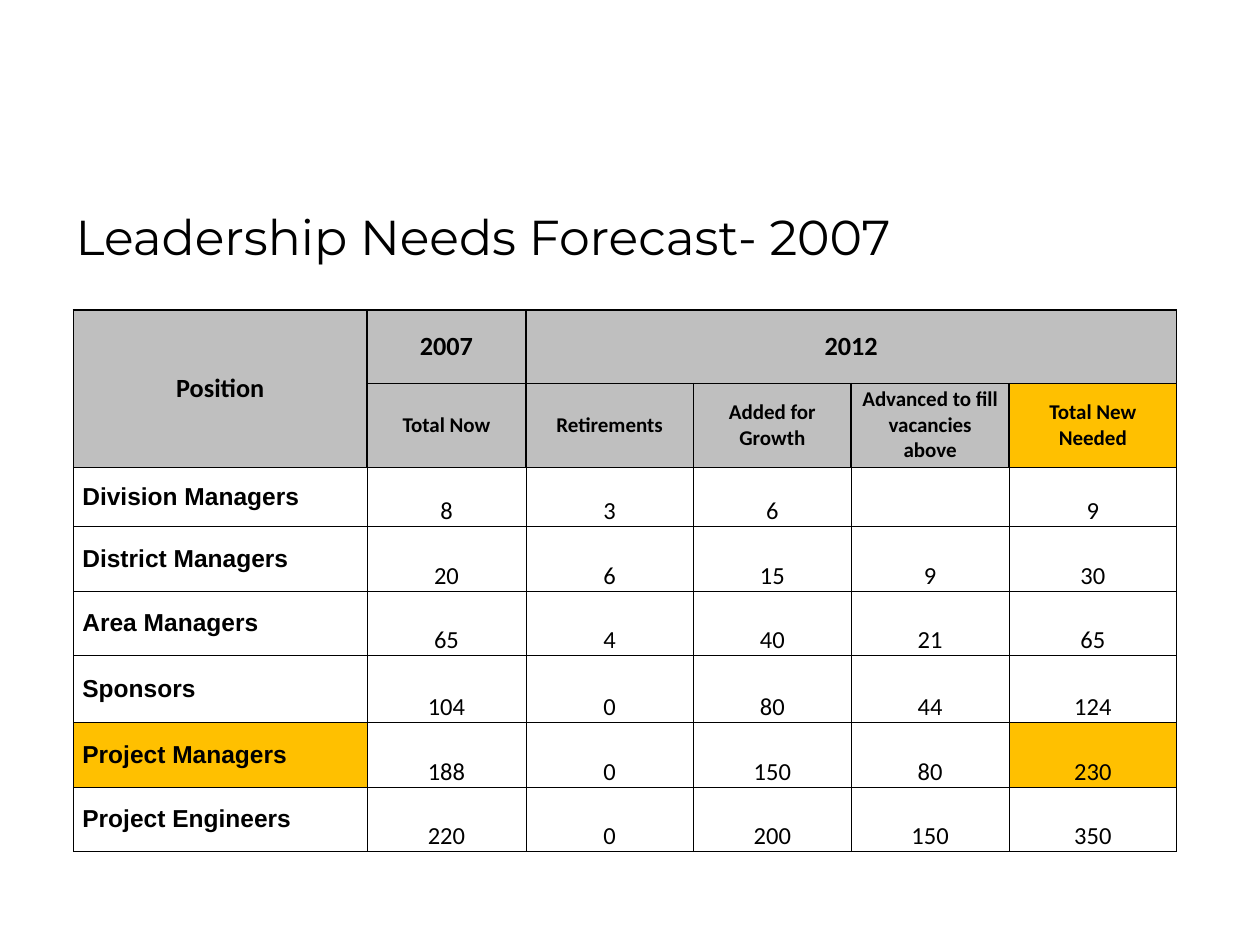
from lxml import etree
from pptx import Presentation
from pptx import util as u
from pptx.dml.color import RGBColor
from pptx.enum import text
from pptx.oxml import ns

BLACK, GREY, AMBER = "000000", "BFBFBF", "FFC000"
COLUMN_WIDTHS = [5.92, 3.2, 3.38, 3.18, 3.18, 3.38]
ROW_HEIGHTS = [1.47, 1.7, 1.19, 1.3, 1.3, 1.35, 1.3, 1.3]
HEADER_ROWS = 2
ROWS = [
    ["Position", "2007", "2012", "", "", ""],
    ["", "Total Now", "Retirements", "Added for Growth",
     "Advanced to fill vacancies above", "Total New Needed"],
    ["Division Managers", "8", "3", "6", "", "9"],
    ["District Managers", "20", "6", "15", "9", "30"],
    ["Area Managers", "65", "4", "40", "21", "65"],
    ["Sponsors", "104", "0", "80", "44", "124"],
    ["Project Managers", "188", "0", "150", "80", "230"],
    ["Project Engineers", "220", "0", "200", "150", "350"],
]
HIGHLIGHTED = {(1, 5), (6, 0), (6, 5)}


def color(value):
    return RGBColor.from_string(value)


def write(frame, content, font="Calibri", size=14, bold=False, fill=BLACK, align="LEFT"):
    paragraph = frame.paragraphs[0]
    paragraph.alignment = getattr(text.PP_ALIGN, align)
    paragraph.font.size = u.Pt(size)
    if content:
        run = paragraph.add_run()
        run.text = content
        run.font.name = font
        run.font.size = u.Pt(size)
        run.font.bold = bold
        run.font.color.rgb = color(fill)


def set_borders(cell, side_width, top_width, bottom_width):
    properties = cell._tc.get_or_add_tcPr()
    widths = {"lnL": side_width, "lnR": side_width, "lnT": top_width, "lnB": bottom_width}
    for tag, width in widths.items():
        line = etree.SubElement(properties, ns.qn(f"a:{tag}"), w=str(u.Pt(width)))
        solid = etree.SubElement(line, ns.qn("a:solidFill"))
        etree.SubElement(solid, ns.qn("a:srgbClr"), val=BLACK)


def format_cell(cell, row, column, content):
    header = row < HEADER_ROWS
    label = column == 0
    if header:
        set_borders(cell, 1, 1 if row == 0 else 0.25, 0.25)
        style = dict(size=15 if row == 0 else 12, bold=True, align="CENTER")
    else:
        set_borders(cell, 0.25, 0.25, 0.25)
        style = dict(font="Arial", bold=True) if label else dict(align="CENTER")
    if (row, column) in HIGHLIGHTED or header:
        cell.fill.solid()
        cell.fill.fore_color.rgb = color(AMBER if (row, column) in HIGHLIGHTED else GREY)
    else:
        cell.fill.background()
    middle = header or label
    cell.vertical_anchor = text.MSO_ANCHOR.MIDDLE if middle else text.MSO_ANCHOR.BOTTOM
    cell.margin_left = cell.margin_right = u.Cm(0.18 if middle else 0)
    cell.margin_top = cell.margin_bottom = 0
    write(cell.text_frame, content, **style)


def add_title(slide, left, top, width, height):
    title = slide.shapes.title
    title.left, title.top, title.width, title.height = map(u.Cm, (left, top, width, height))
    title.text_frame.vertical_anchor = text.MSO_ANCHOR.MIDDLE
    write(title.text_frame, "Leadership Needs Forecast- 2007", font="Montserrat", size=28)


def add_forecast_table(slide, left, top):
    frame = slide.shapes.add_table(
        len(ROWS), len(COLUMN_WIDTHS), u.Cm(left), u.Cm(top),
        u.Cm(sum(COLUMN_WIDTHS)), u.Cm(sum(ROW_HEIGHTS)))
    table = frame.table
    table.first_row = table.horz_banding = False
    for column, width in zip(table.columns, COLUMN_WIDTHS):
        column.width = u.Cm(width)
    for row, height in zip(table.rows, ROW_HEIGHTS):
        row.height = u.Cm(height)
    table.cell(0, 0).merge(table.cell(1, 0))
    table.cell(0, 2).merge(table.cell(0, 5))
    for row, contents in enumerate(ROWS):
        for column, content in enumerate(contents):
            format_cell(table.cell(row, column), row, column, content)


def main():
    presentation = Presentation()
    presentation.slide_width, presentation.slide_height = u.Cm(25.4), u.Cm(19.05)
    slide = presentation.slides.add_slide(presentation.slide_layouts[5])
    add_forecast_table(slide, 1.48, 6.25)
    add_title(slide, 1.27, 3.81, 21.79, 1.9)
    presentation.save("out.pptx")


if __name__ == "__main__":
    main()
